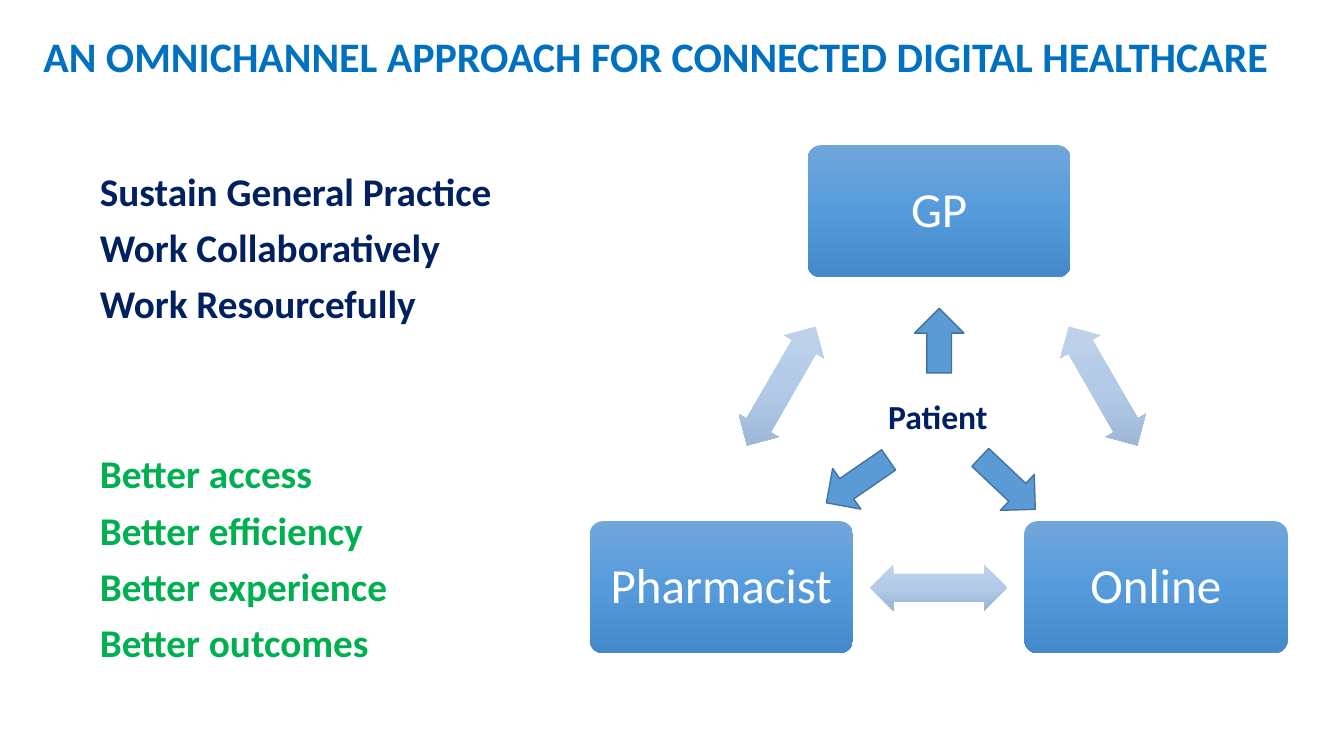
from dataclasses import dataclass

import lxml.etree
import pptx
import pptx.dml.color
import pptx.enum.shapes
import pptx.enum.text
import pptx.oxml.ns
import pptx.util

Inches = pptx.util.Inches
Pt = pptx.util.Pt
Shape = pptx.enum.shapes.MSO_SHAPE
Align = pptx.enum.text.PP_ALIGN
Anchor = pptx.enum.text.MSO_ANCHOR
qn = pptx.oxml.ns.qn


@dataclass(frozen=True)
class Theme:
    font: str = "Calibri"
    title_color: str = "0070C0"
    navy: str = "002060"
    green: str = "00B050"
    white: str = "FFFFFF"
    arrow_fill: str = "5B9BD5"
    arrow_line: str = "43739E"
    node_gradient: tuple = ("71A6DB", "559BDB", "448ACA")
    link_gradient: tuple = ("C0D2EB", "B3CBE9", "9BB4D3")
    title_size: int = 30
    list_size: int = 28
    node_size: int = 35
    hub_size: int = 24


THEME = Theme()
GOALS = ["Sustain General Practice", "Work Collaboratively", "Work Resourcefully"]
BENEFITS = ["Better access", "Better efficiency", "Better experience", "Better outcomes"]

# Places inside the diagram, measured from its top left corner
NODE_SIZE = (2.61, 1.31)
NODES = [("GP", 2.16, 0), ("Online", 4.31, 3.73), ("Pharmacist", 0, 3.73)]
LINK_SIZE = (1.36, 0.46)
LINKS = [(4.41, 2.16, 60), (2.78, 4.16, 180), (1.22, 2.16, 300)]
HUB_ARROWS = [(3.22, 1.62, 0.64, 0), (2.41, 2.96, 0.75, 235.4), (3.9, 2.98, 0.75, 133.4)]


def rgb(value):
    return pptx.dml.color.RGBColor.from_string(value)


def place(shape, box):
    shape.left, shape.top, shape.width, shape.height = map(Inches, box)


def style(para, size, color, bold=False):
    for span in para.runs:
        span.font.name = THEME.font
        span.font.size = Pt(size)
        span.font.bold = bold
        span.font.color.rgb = rgb(color)


def fill_gradient(shape, colors):
    """Fill from top to bottom, upright however the shape is turned."""
    shape.fill.gradient()
    gradient = shape._element.spPr.find(qn("a:gradFill"))
    gradient.set("rotWithShape", "0")
    gradient.find(qn("a:lin")).set("ang", "5400000")
    stops = gradient.find(qn("a:gsLst"))
    for stop in list(stops):
        stops.remove(stop)
    for index, color in enumerate(colors):
        stop = lxml.etree.SubElement(stops, qn("a:gs"), pos=str(index * 50000))
        lxml.etree.SubElement(stop, qn("a:srgbClr"), val=color)


def add_shape(page, kind, box, rotation=0):
    shape = page.shapes.add_shape(kind, *map(Inches, box))
    shape.rotation = rotation
    shape.shadow.inherit = False
    return shape


def fill_title(title, box):
    place(title, box)
    frame = title.text_frame
    frame.text = "AN OMNICHANNEL APPROACH FOR CONNECTED DIGITAL HEALTHCARE"
    frame.vertical_anchor = Anchor.TOP
    frame.auto_size = pptx.enum.text.MSO_AUTO_SIZE.NONE
    para = frame.paragraphs[0]
    para.alignment = Align.LEFT
    style(para, THEME.title_size, THEME.title_color, bold=True)


def fill_list(body, box):
    place(body, box)
    frame = body.text_frame
    frame.text = "\n".join(GOALS + BENEFITS)
    frame.auto_size = pptx.enum.text.MSO_AUTO_SIZE.NONE
    for index, para in enumerate(frame.paragraphs):
        para.line_spacing = 0.9
        para.space_before = Pt(91 if index == len(GOALS) else 10)
        color = THEME.navy if index < len(GOALS) else THEME.green
        style(para, THEME.list_size, color, bold=True)
        properties = para._p.get_or_add_pPr()
        properties.set("marL", "0")
        properties.set("indent", "0")
        lxml.etree.SubElement(properties, qn("a:buNone"))


def add_node(page, label, box):
    node = add_shape(page, Shape.ROUNDED_RECTANGLE, box)
    node.adjustments[0] = 0.1
    fill_gradient(node, THEME.node_gradient)
    node.line.fill.background()
    frame = node.text_frame
    frame.text = label
    frame.word_wrap = True
    frame.vertical_anchor = Anchor.MIDDLE
    frame.margin_left = frame.margin_right = Inches(0.15)
    para = frame.paragraphs[0]
    para.alignment = Align.CENTER
    para.line_spacing = 0.9
    style(para, THEME.node_size, THEME.white)


def add_link(page, box, rotation):
    link = add_shape(page, Shape.LEFT_RIGHT_ARROW, box, rotation)
    link.adjustments[0] = 0.6
    link.adjustments[1] = 0.5
    fill_gradient(link, THEME.link_gradient)
    link.line.fill.background()


def add_hub_arrow(page, box, rotation):
    arrow = add_shape(page, Shape.UP_ARROW, box, rotation)
    arrow.fill.solid()
    arrow.fill.fore_color.rgb = rgb(THEME.arrow_fill)
    arrow.line.color.rgb = rgb(THEME.arrow_line)
    arrow.line.width = Pt(1)


def add_care_diagram(page, left, top):
    """Three linked channels around the patient."""
    for label, x, y in NODES:
        add_node(page, label, (left + x, top + y, *NODE_SIZE))
    for x, y, rotation in LINKS:
        add_link(page, (left + x, top + y, *LINK_SIZE), rotation)
    hub = page.shapes.add_textbox(*map(Inches, (left + 2.86, top + 2.44, 1.69, 0.5)))
    hub.text_frame.word_wrap = True
    hub.text_frame.text = "Patient"
    style(hub.text_frame.paragraphs[0], THEME.hub_size, THEME.navy, bold=True)
    for x, y, height, rotation in HUB_ARROWS:
        add_hub_arrow(page, (left + x, top + y, 0.49, height), rotation)


def main():
    deck = pptx.Presentation()
    deck.slide_width = Inches(13.33)
    deck.slide_height = Inches(7.5)
    page = deck.slides.add_slide(deck.slide_layouts[1])
    fill_title(page.shapes.title, (0.33, 0.25, 12.51, 0.61))
    fill_list(page.placeholders[1], (0.89, 1.66, 11.5, 5.47))
    add_care_diagram(page, 5.85, 1.44)
    deck.save("out.pptx")


if __name__ == "__main__":
    main()
